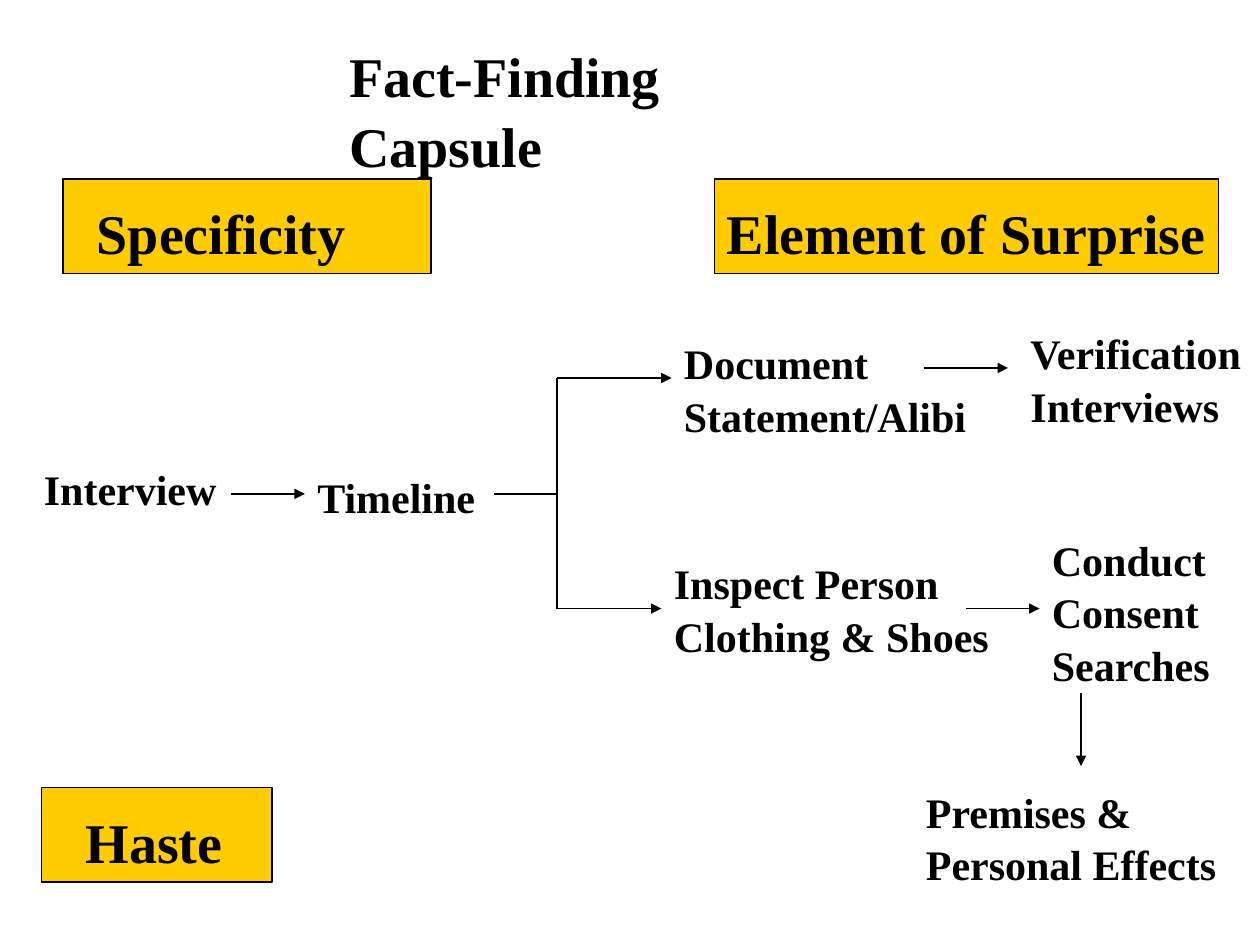
from dataclasses import dataclass
from lxml.etree import SubElement
from pptx import Presentation
from pptx.dml.color import RGBColor
from pptx.enum.shapes import MSO_CONNECTOR, MSO_SHAPE
from pptx.enum.text import MSO_ANCHOR, MSO_AUTO_SIZE, PP_ALIGN
from pptx.oxml.ns import qn
from pptx.util import Inches, Pt


@dataclass(frozen=True)
class Theme:
    font: str = "Times New Roman"
    ink: RGBColor = RGBColor(0, 0, 0)
    accent: RGBColor = RGBColor(0xFF, 0xCC, 0)
    heading_size: int = 32
    step_size: int = 24
    line_width: float = 0.75
    line_spacing: float = 1.05


THEME = Theme()
TITLE = ("Fact-Finding Capsule", (2.67, 0.25, 4.2, 0.63))

BANNERS = [
    ("Specificity", (0.5, 1.42, 2.92, 0.75), (0.67, 1.5, 2.5, 0.63)),
    ("Element of Surprise", (5.67, 1.42, 4, 0.75), (5.67, 1.5, 4, 0.63)),
    ("Haste", (0.33, 6.25, 1.83, 0.75), (0.58, 6.33, 1.75, 0.63)),
]

STEPS = [
    ("Interview", (0.25, 3.61, 1.57, 0.5)),
    ("Timeline", (2.42, 3.67, 1.46, 0.5)),
    ("Document\nStatement/Alibi", (5.33, 2.61, 2.44, 0.9)),
    ("Verification\nInterviews", (8.08, 2.53, 1.9, 0.9)),
    ("Inspect Person\nClothing & Shoes", (5.25, 4.36, 2.7, 0.9)),
    ("Conduct\nConsent\nSearches", (8.25, 4.17, 1.51, 1.3)),
    ("Premises &\nPersonal Effects", (7.25, 6.17, 2.51, 0.9)),
]

FORK_X, MAIN_Y, UPPER_Y, LOWER_Y = 4.42, 3.92, 3, 4.83
ARROWS = [
    (1.83, MAIN_Y, 2.42, MAIN_Y),
    (FORK_X, UPPER_Y, 5.33, UPPER_Y),
    (FORK_X, LOWER_Y, 5.25, LOWER_Y),
    (7.33, 2.92, 8, 2.92),
    (7.67, LOWER_Y, 8.25, LOWER_Y),
    (8.58, 5.5, 8.58, 6.08),
]
FORK_LINES = [
    (3.92, MAIN_Y, FORK_X, MAIN_Y),
    (FORK_X, LOWER_Y, FORK_X, UPPER_Y),
]


def inches(lengths):
    return [Inches(length) for length in lengths]


def write(frame, wording, size, wrap):
    frame.text = wording
    frame.word_wrap = wrap
    frame.auto_size = MSO_AUTO_SIZE.NONE
    frame.vertical_anchor = MSO_ANCHOR.TOP
    for paragraph in frame.paragraphs:
        paragraph.alignment = PP_ALIGN.LEFT
        paragraph.line_spacing = THEME.line_spacing
        for run in paragraph.runs:
            run.font.name = THEME.font
            run.font.size = Pt(size)
            run.font.bold = True
            run.font.color.rgb = THEME.ink


def add_label(slide, wording, area, size, wrap=False):
    label = slide.shapes.add_textbox(*inches(area))
    write(label.text_frame, wording, size, wrap)


def add_panel(slide, area):
    panel = slide.shapes.add_shape(MSO_SHAPE.RECTANGLE, *inches(area))
    panel.shadow.inherit = False
    panel.fill.solid()
    panel.fill.fore_color.rgb = THEME.accent
    panel.line.color.rgb = THEME.ink
    panel.line.width = Pt(THEME.line_width)


def add_link(slide, ends, arrow):
    link = slide.shapes.add_connector(MSO_CONNECTOR.STRAIGHT, *inches(ends))
    link.line.color.rgb = THEME.ink
    link.line.width = Pt(THEME.line_width)
    if arrow:
        SubElement(link.line._get_or_add_ln(), qn("a:tailEnd"), type="triangle")
    SubElement(link._element.spPr, qn("a:effectLst"))


def main():
    deck = Presentation()
    deck.slide_width, deck.slide_height = inches((10, 7.5))
    slide = deck.slides.add_slide(deck.slide_layouts[5])

    wording, area = TITLE
    title = slide.shapes.title
    title.left, title.top, title.width, title.height = inches(area)
    write(title.text_frame, wording, THEME.heading_size, True)

    for wording, panel_area, label_area in BANNERS:
        add_panel(slide, panel_area)
        add_label(slide, wording, label_area, THEME.heading_size)
    for wording, area in STEPS:
        add_label(slide, wording, area, THEME.step_size)
    for ends in ARROWS:
        add_link(slide, ends, True)
    for ends in FORK_LINES:
        add_link(slide, ends, False)

    deck.save("out.pptx")


if __name__ == "__main__":
    main()
